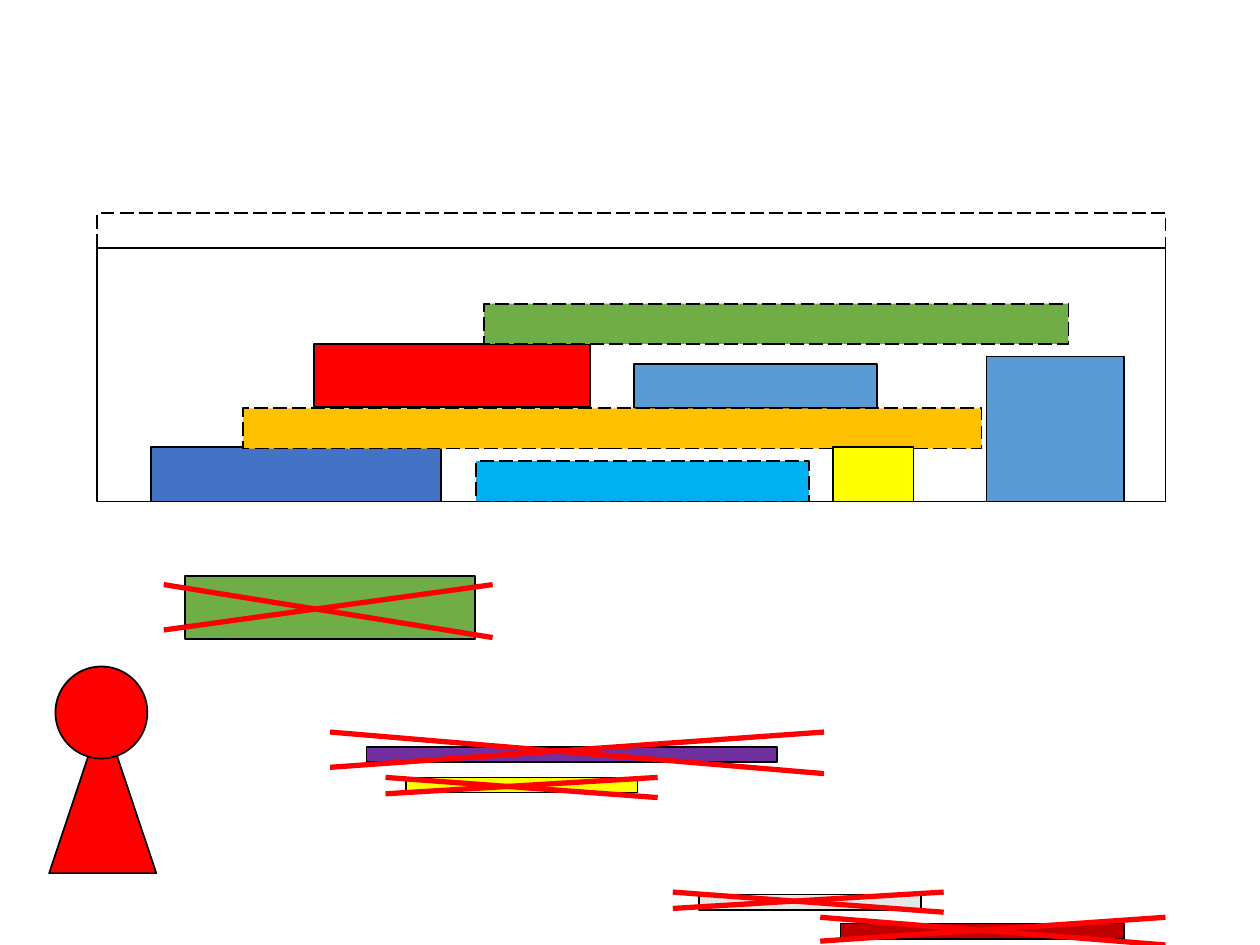
import pptx
import pptx.util
import pptx.dml.color
import pptx.enum.dml
import pptx.enum.shapes
from pptx.util import Inches

SHAPE = pptx.enum.shapes.MSO_SHAPE
DASH = pptx.enum.dml.MSO_LINE.LONG_DASH


def rgb(value):
    return pptx.dml.color.RGBColor.from_string(value)


def add_outlined(shapes, kind, box, fill=None, dashed=False):
    """Add a preset shape with a thin black outline; no fill means hollow."""
    sp = shapes.add_shape(kind, *[Inches(v) for v in box])
    sp.shadow.inherit = False
    if fill:
        sp.fill.solid()
        sp.fill.fore_color.rgb = rgb(fill)
    else:
        sp.fill.background()
    sp.line.color.rgb = rgb("000000")
    sp.line.width = pptx.util.Pt(1)
    if dashed:
        sp.line.dash_style = DASH


prs = pptx.Presentation()
prs.slide_width = Inches(10)
prs.slide_height = Inches(7.5)
s = prs.slides.add_slide(prs.slide_layouts[6])

# Container with its lid, then the blocks: box, fill, dashed
blocks = [
    ((0.77, 1.97, 8.48, 2.01), None, False),
    ((0.77, 1.69, 8.48, 0.28), None, True),
    ((1.2, 3.55, 2.3, 0.43), "4472C4", False),
    ((1.47, 4.57, 2.3, 0.5), "70AD47", False),
    ((2.49, 2.73, 2.19, 0.5), "FF0000", False),
    ((2.91, 5.93, 3.26, 0.12), "7030A0", False),
    ((3.22, 6.17, 1.84, 0.12), "FFFF00", False),
    ((5.55, 7.1, 1.76, 0.12), "E7E6E6", False),
    ((6.67, 7.33, 2.25, 0.12), "C00000", False),
    ((3.84, 2.41, 4.64, 0.32), "70AD47", True),
    ((5.03, 2.89, 1.93, 0.35), "5B9BD5", False),
    ((1.93, 3.24, 5.86, 0.32), "FFC000", True),
    ((6.61, 3.55, 0.64, 0.43), "FFFF00", False),
    ((3.78, 3.66, 2.64, 0.32), "00B0F0", True),
    ((7.83, 2.83, 1.09, 1.15), "5B9BD5", False),
]
for box, fill, dashed in blocks:
    add_outlined(s.shapes, SHAPE.RECTANGLE, box, fill, dashed)

# Crosses over rejected blocks: left, right, top, end of falling line, start of rising line
crosses = [
    (1.3, 3.91, 4.64, 5.06, 5),
    (2.62, 6.54, 5.81, 6.14, 6.09),
    (3.06, 5.22, 6.17, 6.33, 6.3),
    (5.34, 7.49, 7.08, 7.24, 7.21),
    (6.51, 9.25, 7.28, 7.5, 7.47),
]
for left, right, top, fall_end, rise_start in crosses:
    cross = s.shapes.add_group_shape()
    for y1, y2 in ((top, fall_end), (rise_start, top)):
        line = cross.shapes.add_connector(
            pptx.enum.shapes.MSO_CONNECTOR.STRAIGHT,
            Inches(left), Inches(y1), Inches(right), Inches(y2))
        line.line.color.rgb = rgb("FF0000")
        line.line.width = pptx.util.Pt(3)
        line._element.spPr.append(pptx.oxml.xmlchemy.OxmlElement("a:effectLst"))

# Player pawn
pawn = s.shapes.add_group_shape()
add_outlined(pawn.shapes, SHAPE.ISOSCELES_TRIANGLE, (0.39, 5.66, 0.85, 1.27), "FF0000")
add_outlined(pawn.shapes, SHAPE.OVAL, (0.44, 5.29, 0.73, 0.73), "FF0000")

prs.save("out.pptx")
